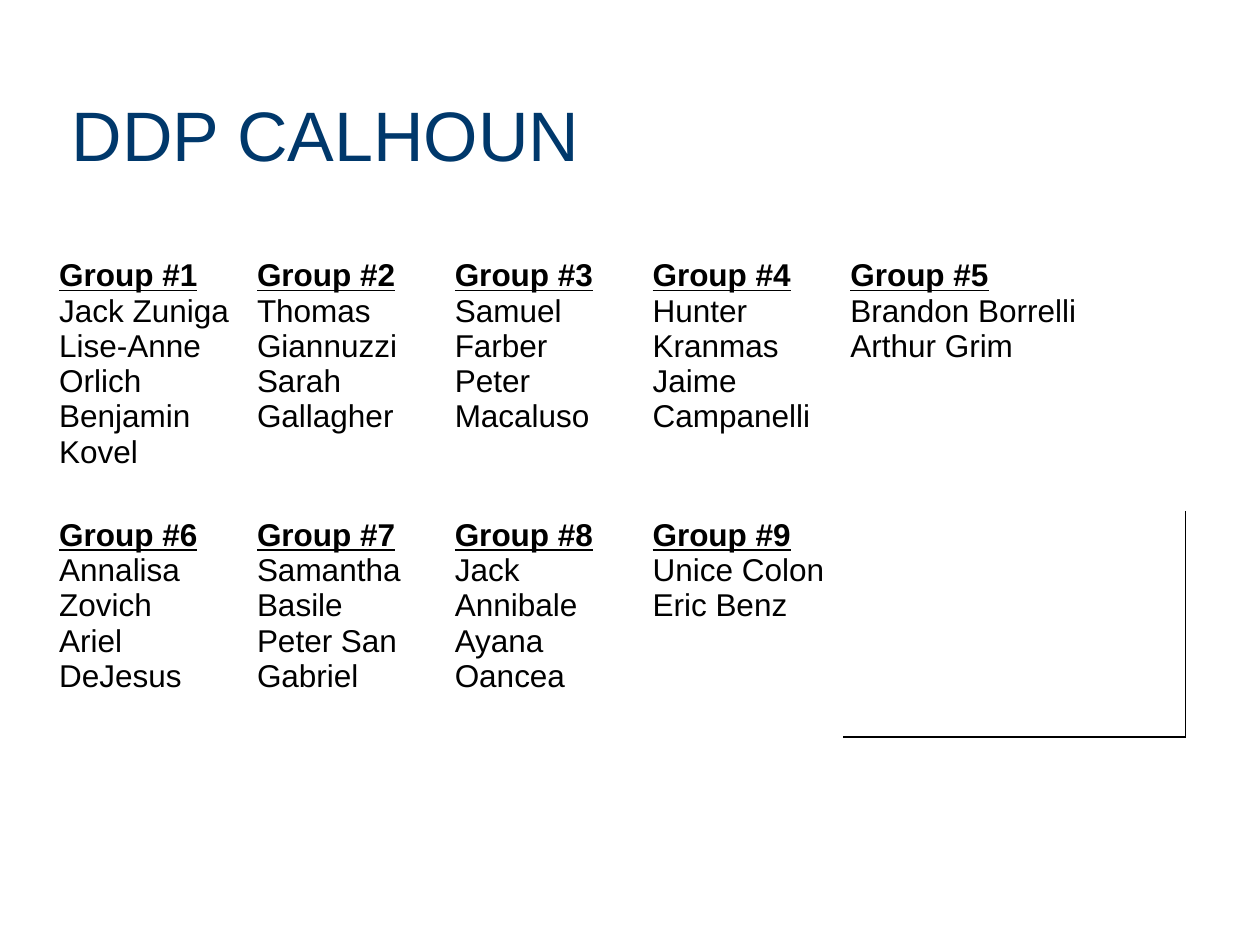
from lxml.etree import SubElement
from pptx import Presentation
from pptx.dml.color import RGBColor as RGB
from pptx.enum.text import MSO_ANCHOR as Anchor
from pptx.oxml import parse_xml
from pptx.oxml.ns import nsdecls, qn
from pptx.util import Inches, Pt

GROUPS = [
    ["Jack Zuniga", "Lise-Anne Orlich", "Benjamin Kovel"],
    ["Thomas Giannuzzi", "Sarah Gallagher"],
    ["Samuel Farber", "Peter Macaluso"],
    ["Hunter Kranmas", "Jaime Campanelli"],
    ["Brandon Borrelli", "Arthur Grim"],
    ["Annalisa Zovich", "Ariel DeJesus"],
    ["Samantha Basile", "Peter San Gabriel"],
    ["Jack Annibale", "Ayana Oancea"],
    ["Unice Colon", "Eric Benz"],
]
WIDTHS = [1.57] * 4 + [2.71]
HEIGHTS = [2.06, 1.79]
MARGINS = dict.fromkeys(
    ["margin_left", "margin_right", "margin_top", "margin_bottom"], Inches(0.05))


def style(run, size, color, **form):
    font = run.font
    font.color.rgb = RGB.from_string(color)
    for key, value in {"name": "Arial", "size": Pt(size), **form}.items():
        setattr(font, key, value)


deck = Presentation()
deck.slide_width, deck.slide_height = Inches(10), Inches(7.5)
slide = deck.slides.add_slide(deck.slide_layouts[6])

# Table of groups
frame = slide.shapes.add_table(
    len(HEIGHTS), len(WIDTHS), Inches(0.42), Inches(2),
    Inches(sum(WIDTHS)), Inches(sum(HEIGHTS)))
table = frame.table
table.first_row = table.horz_banding = False
for col, width in zip(table.columns, WIDTHS):
    col.width = Inches(width)
for row, height in zip(table.rows, HEIGHTS):
    row.height = Inches(height)

for num, names in enumerate(GROUPS):
    cell = table.cell(*divmod(num, len(WIDTHS)))
    cell.fill.solid()
    cell.fill.fore_color.rgb = RGB.from_string("FFFFFF")
    for key, value in MARGINS.items():
        setattr(cell, key, value)
    para = cell.text_frame.paragraphs[0]
    head = para.add_run()
    head.text = f"Group #{num + 1}"
    style(head, 18, "000000", bold=True, underline=True)
    for name in names:
        para.add_line_break()
        run = para.add_run()
        run.text = name
        style(run, 18, "000000", bold=False, underline=False)

# The unused last cell keeps its right and bottom borders
last = table.cell(1, 4)
last.fill.background()
props = last._tc.get_or_add_tcPr()
for place, tag in enumerate(["lnR", "lnB"]):
    line = parse_xml(f'<a:{tag} {nsdecls("a")} w="{Pt(0.75)}"/>')
    fill = SubElement(line, qn("a:solidFill"))
    SubElement(fill, qn("a:srgbClr"), val="000000")
    props.insert(place, line)

# Title
box = slide.shapes.add_textbox(Inches(0.47), Inches(0.67), Inches(9), Inches(0.78))
text = box.text_frame
text.word_wrap = True
text.vertical_anchor = Anchor.MIDDLE
title = text.paragraphs[0].add_run()
title.text = "DDP CALHOUN"
style(title, 40, "00386B")

deck.save("out.pptx")
